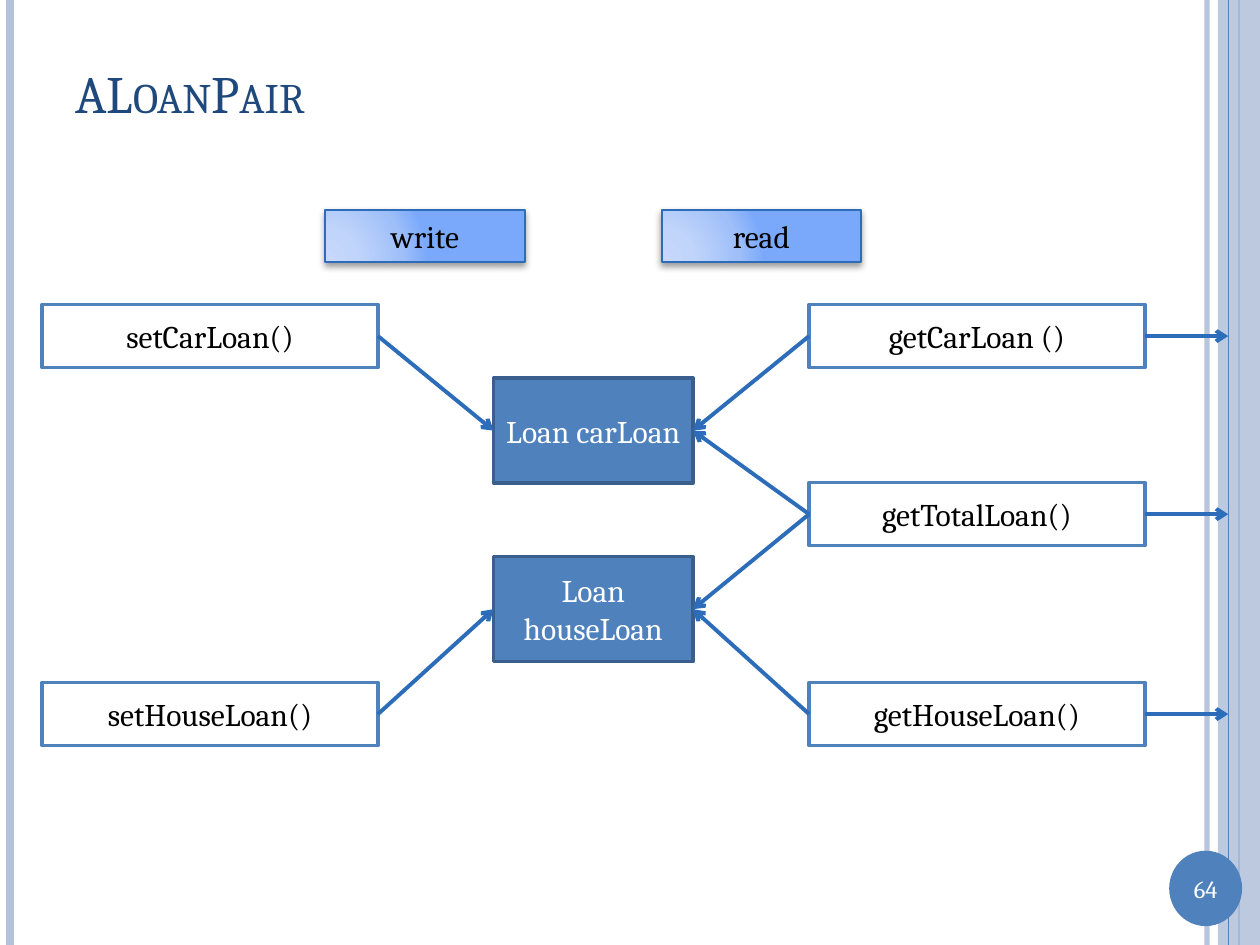
from lxml.etree import SubElement
from pptx import Presentation
from pptx.dml.color import RGBColor
from pptx.enum.shapes import MSO_CONNECTOR, MSO_SHAPE
from pptx.enum.text import MSO_ANCHOR, PP_ALIGN
from pptx.oxml import parse_xml
from pptx.oxml.ns import nsdecls, qn
from pptx.util import Cm, Pt

FONT = "Cambria"
BLUE, PALE, ARROW = "4F81BD", "B3C1DB", "2C6CB9"
LABEL_STOPS = [(0, "C7D8FB"), (30, "C1D5FA"), (75, "9FBFF9"), (100, "7AA9FB")]


def rgb(value):
    """Turn a hex string into a colour."""
    return RGBColor.from_string(value)


def put_text(sp, text, size=18, color="000000", align=PP_ALIGN.CENTER, small_caps=False):
    """Write one formatted paragraph, centred vertically, in a shape."""
    tf = sp.text_frame
    tf.word_wrap = True
    tf.vertical_anchor = MSO_ANCHOR.MIDDLE
    p = tf.paragraphs[0]
    p.alignment = align
    r = p.add_run()
    r.text = text
    r.font.name = FONT
    r.font.size = Pt(size)
    r.font.color.rgb = rgb(color)
    if small_caps:
        r.font._element.set("cap", "small")


def add_block(s, box, fill, line=None, width=2, shape=MSO_SHAPE.RECTANGLE):
    """Add a filled preset shape without a shadow."""
    sp = s.shapes.add_shape(shape, *map(Cm, box))
    sp.shadow.inherit = False
    sp.fill.solid()
    sp.fill.fore_color.rgb = rgb(fill)
    if line:
        sp.line.color.rgb = rgb(line)
        sp.line.width = Pt(width)
    else:
        sp.line.fill.background()
    return sp


def add_line(s, start, end, color, width):
    """Add a straight connector without a shadow."""
    c = s.shapes.add_connector(MSO_CONNECTOR.STRAIGHT, *map(Cm, start + end))
    c.line.color.rgb = rgb(color)
    c.line.width = Pt(width)
    SubElement(c._element.spPr, qn("a:effectLst"))
    return c


def set_alpha(fill_parent, percent):
    """Make the solid fill under an element partly transparent."""
    clr = fill_parent.find(qn("a:solidFill")).find(qn("a:srgbClr"))
    SubElement(clr, qn("a:alpha"), val=str(percent * 1000))


def add_arrow(s, source, side, target, target_side=None):
    """Draw an arrow from a shape's side to another shape or to a point."""
    c = add_line(s, (0, 0), (1, 1), ARROW, 2.25)
    c.begin_connect(source, side)
    if target_side is None:
        c.end_x, c.end_y = Cm(target), c.begin_y
    else:
        c.end_connect(target, target_side)
    SubElement(c.line._get_or_add_ln(), qn("a:tailEnd"), type="arrow")


def add_label(s, box, text):
    """Add a column label with a radial gradient and a soft shadow."""
    sp = add_block(s, box, LABEL_STOPS[-1][1], ARROW, 1)
    stops = "".join(
        f'<a:gs pos="{pos * 1000}"><a:srgbClr val="{color}"/></a:gs>' for pos, color in LABEL_STOPS
    )
    grad = parse_xml(
        f'<a:gradFill {nsdecls("a")} rotWithShape="1"><a:gsLst>{stops}</a:gsLst><a:path path="circle">'
        '<a:fillToRect l="5000" t="100000" r="120000" b="10000"/></a:path></a:gradFill>'
    )
    spPr = sp._element.spPr
    spPr.replace(spPr.find(qn("a:solidFill")), grad)
    shadow = SubElement(
        spPr.find(qn("a:effectLst")), qn("a:outerShdw"),
        blurRad=str(Pt(4)), dist=str(Pt(2)), dir="5400000", rotWithShape="0",
    )
    clr = SubElement(shadow, qn("a:srgbClr"), val="000000")
    SubElement(clr, qn("a:alpha"), val="40000")
    put_text(sp, text)


def add_frame(s, left, top, width, height):
    """Draw the vertical stripes along both edges of the slide."""
    def stripe(x, color, weight):
        return add_line(s, (left + x, top), (left + x, top + height), color, weight)

    set_alpha(stripe(24.33, PALE, 3).line._get_or_add_ln(), 93)
    stripe(0.21, PALE, 4.5)
    stripe(24.98, BLUE, 1.5)
    band = add_block(s, (left + width - 0.85, top, 0.85, height), PALE)
    set_alpha(band._element.spPr, 87)
    stripe(24.76, BLUE, 0.75)


def add_page_number(s, left, top, width, height, number):
    """Draw the slide number in its disc."""
    add_block(s, (left, top, width, height), BLUE, shape=MSO_SHAPE.OVAL)
    tb = s.shapes.add_textbox(*map(Cm, (left, top + 0.33, width, 0.86)))
    put_text(tb, number, size=14, color="FFFFFF")


def add_title(s, left, top, width, height, text):
    """Write the slide title in small capitals."""
    tb = s.shapes.add_textbox(*map(Cm, (left, top, width, height)))
    put_text(tb, text, size=30, color="1F497D", align=PP_ALIGN.LEFT, small_caps=True)


def add_diagram(s, left, top, width, height):
    """Draw setters, variables and getters with the arrows between them."""
    method_w, method_h, rows = 6.77, 1.27, (1.91, 5.5, height - 1.27)
    getter_x = 15.46

    def method(text, x, row):
        sp = add_block(s, (left + x, top + rows[row], method_w, method_h), "FFFFFF", BLUE)
        put_text(sp, text)
        return sp

    def variable(text, y):
        sp = add_block(s, (left + 9.1, top + y, 4.02, 2.12), BLUE, "3A5F8C")
        put_text(sp, text, color="FFFFFF")
        return sp

    for text, x in (("write", 5.71), ("read", 12.49)):
        add_label(s, (left + x, top, 4.02, 1.06), text)

    car, house = variable("Loan carLoan", 3.39), variable("Loan houseLoan", 6.99)
    for text, row, target in (("setCarLoan()", 0, car), ("setHouseLoan()", 2, house)):
        add_arrow(s, method(text, 0, row), 3, target, 1)

    getters = (
        ("getCarLoan ()", [car]),
        ("getTotalLoan()", [car, house]),
        ("getHouseLoan()", [house]),
    )
    for row, (text, sources) in enumerate(getters):
        getter = method(text, getter_x, row)
        add_arrow(s, getter, 3, left + width)
        for source in sources:
            add_arrow(s, getter, 1, source, 3)


def main():
    """Build and save the slide."""
    prs = Presentation()
    prs.slide_width, prs.slide_height = Cm(25.4), Cm(19.05)
    s = prs.slides.add_slide(prs.slide_layouts[6])
    add_frame(s, 0, 0, 25.4, 19.05)
    add_page_number(s, 23.57, 17.15, 1.47, 1.52, "64")
    add_title(s, 1.27, 0.76, 22.02, 2.21, "ALoanPair")
    add_diagram(s, 0.85, 4.23, 23.91, 10.8)
    prs.save("out.pptx")


if __name__ == "__main__":
    main()
